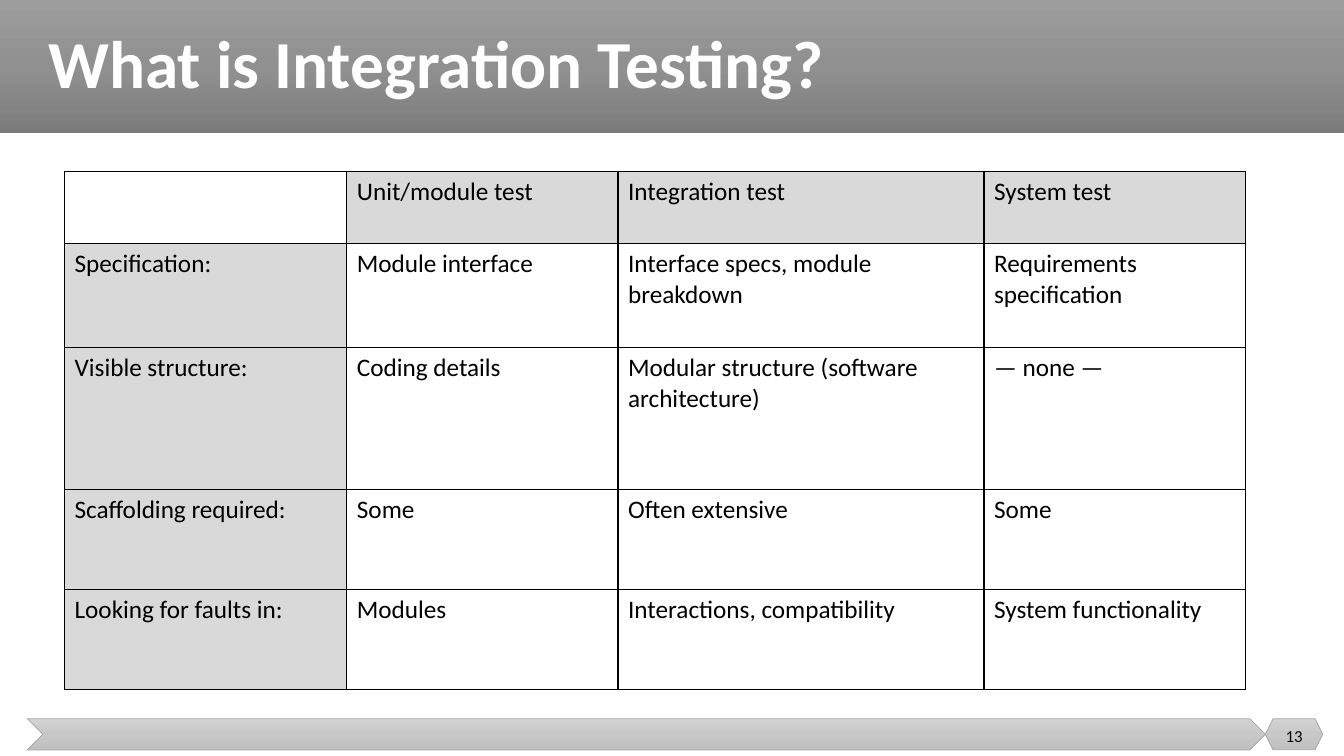
"""Build the slide that compares unit, integration and system tests."""
from pptx import Presentation, util as u
from pptx.dml.color import RGBColor
from pptx.enum import shapes, text
from pptx.oxml import parse_xml
from pptx.oxml.ns import nsdecls, qn

FONT = "Calibri"
HUES = {"white": "FFFFFF", "black": "000000", "head": "D9D9D9", "edge": "A5A5A5"}
DARK = ("9D9D9D", "909090", "7C7C7C")
LIGHT = ("D2D2D2", "C8C8C8", "C0C0C0")
COLS = (2.8, 2.69, 3.63, 2.59)
ROWS = (0.72, 1.03, 1.41, 0.99, 0.99)
CELLS = (
    ("", "Unit/module test", "Integration test", "System test"),
    ("Specification:", "Module interface", "Interface specs, module breakdown",
     "Requirements specification"),
    ("Visible structure:", "Coding details",
     "Modular structure (software architecture)", "— none —"),
    ("Scaffolding required:", "Some", "Often extensive", "Some"),
    ("Looking for faults in:", "Modules", "Interactions, compatibility",
     "System functionality"),
)


def color(name):
    return RGBColor.from_string(HUES[name])


def style(para, size, hue, bold=False):
    font = para.font
    font.name, font.size, font.bold = FONT, u.Pt(size), bold
    font.color.rgb = color(hue)


def place(shape, *box):
    shape.left, shape.top, shape.width, shape.height = map(u.Inches, box)


def add_bar(slide, kind, box, tones, edge=None):
    bar = slide.shapes.add_shape(kind, *map(u.Inches, box))
    bar.shadow.inherit = False
    bar.fill.gradient()
    bar.fill.gradient_angle = 270
    stops = "".join(
        f'<a:gs pos="{i * 50000}"><a:srgbClr val="{tone}"/></a:gs>'
        for i, tone in enumerate(tones))
    grad = bar.element.spPr.find(qn("a:gradFill"))
    grad.replace(grad.find(qn("a:gsLst")),
                 parse_xml(f'<a:gsLst {nsdecls("a")}>{stops}</a:gsLst>'))
    if edge:
        bar.line.color.rgb = color(edge)
        bar.line.width = u.Pt(0.5)
    else:
        bar.line.fill.background()


def add_title(slide, words):
    title = slide.shapes.title
    slide.shapes.element.append(title.element)
    place(title, 0.38, 0, 12.74, 1.32)
    frame = title.text_frame
    frame.text = words
    frame.vertical_anchor = text.MSO_ANCHOR.MIDDLE
    para = frame.paragraphs[0]
    para.alignment = text.PP_ALIGN.LEFT
    para.line_spacing = 0.9
    style(para, 48, "white", True)


def set_edges(cell):
    props = cell._tc.get_or_add_tcPr()
    for i, side in enumerate("LRTB"):
        props.insert(i, parse_xml(
            f'<a:ln{side} {nsdecls("a")} w="12700"><a:solidFill>'
            f'<a:srgbClr val="{HUES["black"]}"/></a:solidFill></a:ln{side}>'))


def add_grid(slide):
    box = (0.64, 1.7, sum(COLS), sum(ROWS))
    grid = slide.shapes.add_table(len(ROWS), len(COLS), *map(u.Inches, box)).table
    grid.first_row = grid.horz_banding = False
    for col, width in zip(grid.columns, COLS):
        col.width = u.Inches(width)
    for r, (row, height) in enumerate(zip(grid.rows, ROWS)):
        row.height = u.Inches(height)
        for c, cell in enumerate(row.cells):
            cell.text = CELLS[r][c]
            style(cell.text_frame.paragraphs[0], 18, "black")
            if (r == 0) != (c == 0):
                cell.fill.solid()
                cell.fill.fore_color.rgb = color("head")
            else:
                cell.fill.background()
            set_edges(cell)


def add_number(slide, number):
    box = slide.shapes.add_textbox(*map(u.Inches, (12.55, 7.1, 0.57, 0.4)))
    frame = box.text_frame
    frame.word_wrap = True
    frame.vertical_anchor = text.MSO_ANCHOR.MIDDLE
    frame.text = number
    para = frame.paragraphs[0]
    para.alignment = text.PP_ALIGN.CENTER
    style(para, 12, "black")


def main():
    deck = Presentation()
    deck.slide_width, deck.slide_height = u.Inches(13.33), u.Inches(7.5)
    slide = deck.slides.add_slide(deck.slide_layouts[5])
    kinds = shapes.MSO_SHAPE
    add_bar(slide, kinds.RECTANGLE, (0, 0, 13.33, 1.32), DARK)
    add_bar(slide, kinds.CHEVRON, (0.27, 7.13, 12.28, 0.31), LIGHT, "edge")
    add_bar(slide, kinds.HEXAGON, (12.55, 7.13, 0.57, 0.31), LIGHT, "edge")
    add_title(slide, "What is Integration Testing?")
    add_grid(slide)
    add_number(slide, "13")
    deck.save("out.pptx")


if __name__ == "__main__":
    main()
